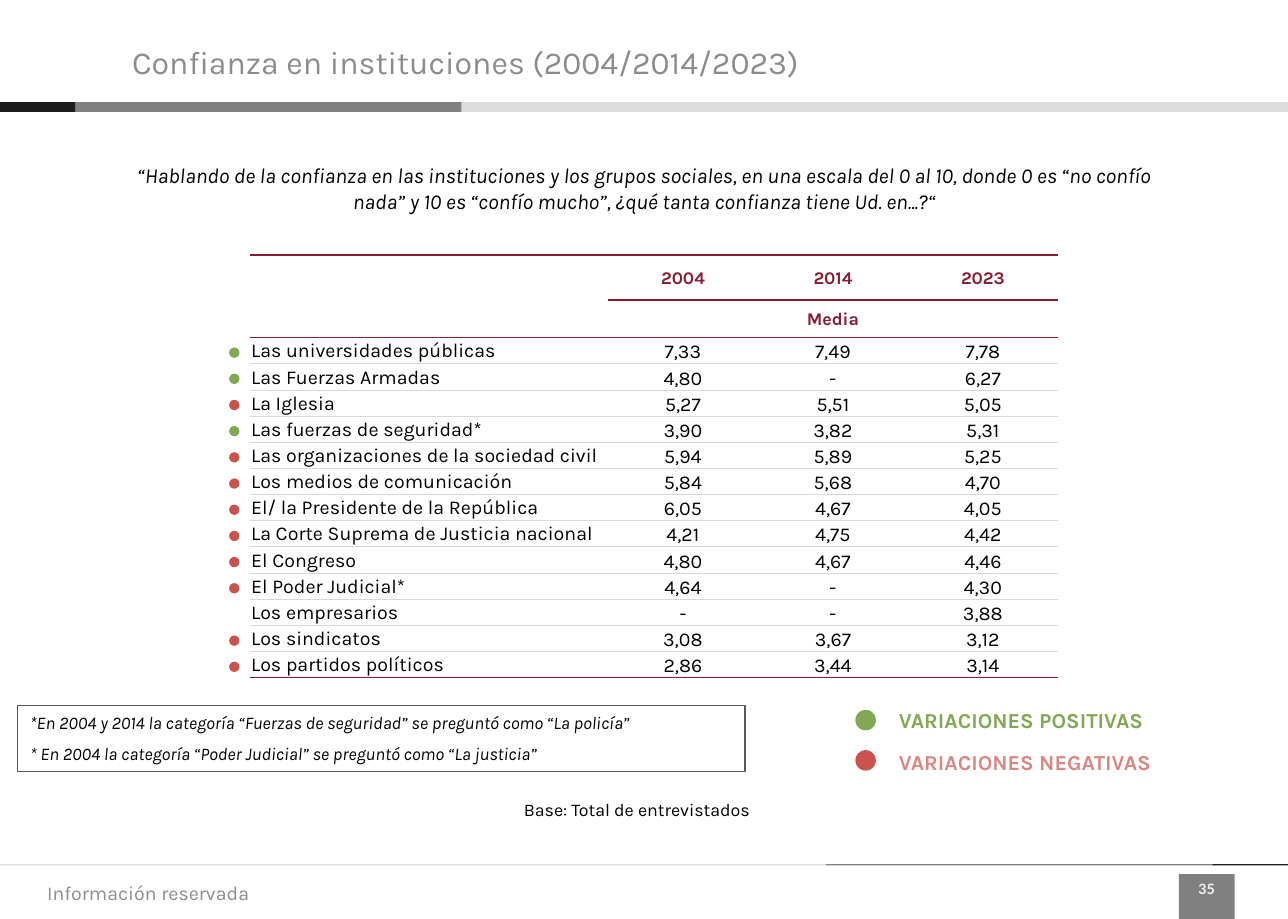
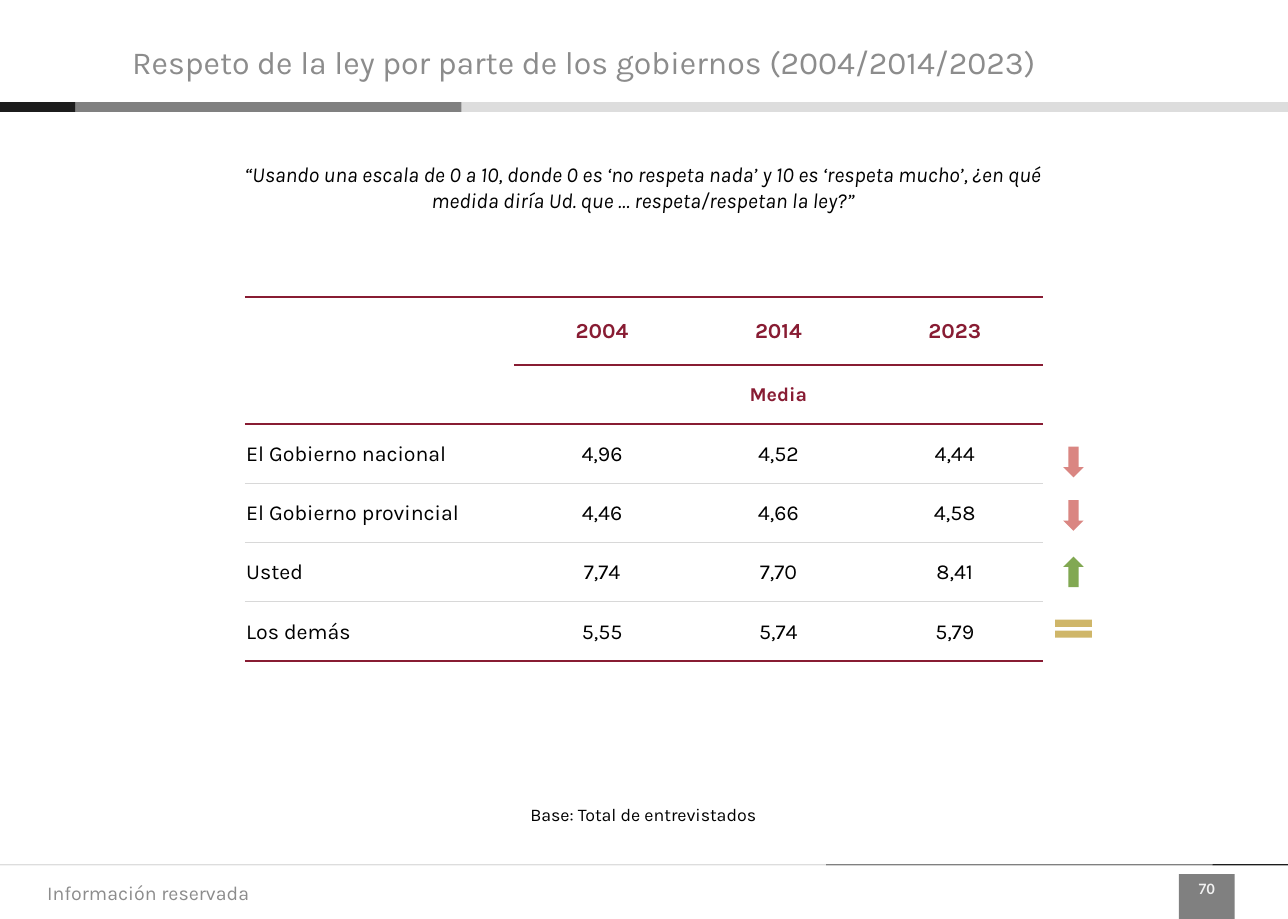
from lxml.etree import SubElement
from pptx import Presentation
from pptx.dml.color import RGBColor
from pptx.enum.shapes import MSO_SHAPE
from pptx.enum.text import MSO_ANCHOR, PP_ALIGN
from pptx.oxml import parse_xml
from pptx.oxml.ns import nsdecls, qn
from pptx.util import Pt

BLACK = RGBColor(0x00, 0x00, 0x00)
INK = RGBColor(0x1C, 0x1C, 0x1C)
OUTLINE = RGBColor(0x59, 0x59, 0x59)
GRAY = RGBColor(0x80, 0x80, 0x80)
TITLE_GRAY = RGBColor(0x8C, 0x8C, 0x8C)
RULE_GRAY = RGBColor(0xD8, 0xD8, 0xD8)
PALE = RGBColor(0xDD, 0xDD, 0xDD)
OFF_WHITE = RGBColor(0xF2, 0xF2, 0xF2)
MAROON = RGBColor(0x88, 0x1C, 0x33)
GREEN = RGBColor(0x81, 0xA8, 0x52)
RED = RGBColor(0xCB, 0x53, 0x4D)
PINK = RGBColor(0xDA, 0x86, 0x82)
GOLD = RGBColor(0xCF, 0xB6, 0x69)

YEARS = ["2004", "2014", "2023"]
BANDS = [(0, 42.5, INK), (42.5, 216.7, GRAY), (259.2, 463.8, PALE)]
FOOTER_LINES = [(0, 463.8, PALE), (463.8, 216.7, GRAY), (680.5, 42.5, INK)]

INSTITUTIONS = [
    ("Las universidades públicas", "7,33", "7,49", "7,78", GREEN),
    ("Las Fuerzas Armadas", "4,80", "-", "6,27", GREEN),
    ("La Iglesia", "5,27", "5,51", "5,05", RED),
    ("Las fuerzas de seguridad*", "3,90", "3,82", "5,31", GREEN),
    ("Las organizaciones de la sociedad civil", "5,94", "5,89", "5,25", RED),
    ("Los medios de comunicación", "5,84", "5,68", "4,70", RED),
    ("El/ la Presidente de la República", "6,05", "4,67", "4,05", RED),
    ("La Corte Suprema de Justicia nacional", "4,21", "4,75", "4,42", RED),
    ("El Congreso", "4,80", "4,67", "4,46", RED),
    ("El Poder Judicial*", "4,64", "-", "4,30", RED),
    ("Los empresarios", "-", "-", "3,88", None),
    ("Los sindicatos", "3,08", "3,67", "3,12", RED),
    ("Los partidos políticos", "2,86", "3,44", "3,14", RED),
]
GOVERNMENTS = [
    ("El Gobierno nacional", "4,96", "4,52", "4,44"),
    ("El Gobierno provincial", "4,46", "4,66", "4,58"),
    ("Usted", "7,74", "7,70", "8,41"),
    ("Los demás", "5,55", "5,74", "5,79"),
]
SLIDES = [
    dict(
        number="35",
        title="Confianza en instituciones (2004/2014/2023)",
        question="“Hablando de la confianza en las instituciones y los grupos sociales, "
        "en una escala del 0 al 10, donde 0 es “no confío nada” y 10 es “confío mucho”, "
        "¿qué tanta confianza tiene Ud. en...?“",
        question_at=(67, 87.8, 589.7, 36),
        base_at=(282.2, 445, 150.5, 20),
        table_at=(140.3, 143.3),
        columns=[201, 84.2, 84.2, 84.2],
        heights=[25.2, 21.1] + [14.7] * len(INSTITUTIONS),
        sizes=(10, 10, 11),
        value_anchor=MSO_ANCHOR.BOTTOM,
        rows=[row[:4] for row in INSTITUTIONS],
    ),
    dict(
        number="70",
        title="Respeto de la ley por parte de los gobiernos (2004/2014/2023)",
        question="“Usando una escala de 0 a 10, donde 0 es ‘no respeta nada’ y 10 es "
        "‘respeta mucho’, ¿en qué medida diría Ud. que … respeta/respetan la ley?”",
        question_at=(113.8, 87.1, 494.6, 36),
        base_at=(285.8, 447.8, 150.5, 20),
        table_at=(137.5, 166.7),
        columns=[151, 99, 99, 99],
        heights=[38.2, 33.1] + [33.3] * len(GOVERNMENTS),
        sizes=(12, 11, 12),
        value_anchor=MSO_ANCHOR.MIDDLE,
        rows=GOVERNMENTS,
    ),
]


def add_figure(page, kind, at, color):
    shape = page.shapes.add_shape(kind, *[Pt(length) for length in at])
    shape.shadow.inherit = False
    shape.line.fill.background()
    if color is None:
        shape.fill.background()
    else:
        shape.fill.solid()
        shape.fill.fore_color.rgb = color
    return shape


def write(frame, lines, size, color, bold=False, italic=False,
          align=PP_ALIGN.LEFT, anchor=MSO_ANCHOR.TOP, name="Karla"):
    frame.word_wrap = True
    frame.vertical_anchor = anchor
    for index, line in enumerate(lines):
        para = frame.paragraphs[0] if index == 0 else frame.add_paragraph()
        para.text = line
        para.alignment = align
        if index:
            para.space_before = Pt(5.7)
        para.font.name = name
        para.font.size = Pt(size)
        para.font.bold = bold
        para.font.italic = italic
        para.font.color.rgb = color


deck = Presentation()
deck.slide_width, deck.slide_height = Pt(723), Pt(516)
pages = []

for content in SLIDES:
    page = deck.slides.add_slide(deck.slide_layouts[6])
    pages.append(page)
    for left, width, color in BANDS:
        add_figure(page, MSO_SHAPE.RECTANGLE, (left, 57.4, width, 5.4), color)
    for left, width, color in FOOTER_LINES:
        add_figure(page, MSO_SHAPE.RECTANGLE, (left, 485.2, width, 0.7), color)
    badge = add_figure(page, MSO_SHAPE.RECTANGLE, (661.8, 490.8, 31.2, 25.2), GRAY)
    write(badge.text_frame, [content["number"]], 8, OFF_WHITE, bold=True,
          align=PP_ALIGN.CENTER, name="Lato")

    for line, at, style in [
        ("Información reservada", (19.4, 487.7, 168.5, 27.4),
         dict(size=11, color=TITLE_GRAY, anchor=MSO_ANCHOR.MIDDLE)),
        (content["title"], (67, 14.6, 567.4, 39.6),
         dict(size=18, color=TITLE_GRAY, anchor=MSO_ANCHOR.MIDDLE)),
        (content["question"], content["question_at"],
         dict(size=12, color=BLACK, italic=True, align=PP_ALIGN.CENTER)),
        ("Base: Total de entrevistados", content["base_at"],
         dict(size=10, color=BLACK, align=PP_ALIGN.CENTER)),
    ]:
        box = page.shapes.add_textbox(*[Pt(length) for length in at])
        write(box.text_frame, [line], **style)

    columns, heights = content["columns"], content["heights"]
    table_frame = page.shapes.add_table(
        len(heights), len(columns), *[Pt(length) for length in content["table_at"]],
        Pt(sum(columns)), Pt(sum(heights)))
    table = table_frame.table
    table.first_row = table.horz_banding = False
    for column, width in zip(table.columns, columns):
        column.width = Pt(width)
    for row, height in zip(table.rows, heights):
        row.height = Pt(height)

    grid = [["", *YEARS], ["", "Media", "", ""], *content["rows"]]
    last = len(grid) - 1
    for r, values in enumerate(grid):
        size = content["sizes"][min(r, 2)]
        for c, value in enumerate(values):
            cell = table.cell(r, c)
            cell.margin_left = cell.margin_right = cell.margin_top = Pt(0.7)
            cell.margin_bottom = Pt(0)
            cell.fill.background()
            write(cell.text_frame, [value], size, MAROON if r < 2 else BLACK, bold=r < 2,
                  align=PP_ALIGN.CENTER if c else PP_ALIGN.LEFT)
            cell.vertical_anchor = content["value_anchor"] if r > 1 and c else MSO_ANCHOR.MIDDLE
            properties = cell._tc.get_or_add_tcPr()
            edges = [("lnL", None), ("lnR", None),
                     ("lnT", MAROON if r < 3 else RULE_GRAY),
                     ("lnB", MAROON if r < 2 or r == last else RULE_GRAY)]
            for position, (edge, color) in enumerate(edges):
                width = Pt(1) if color == MAROON else Pt(0.5)
                line = parse_xml(f'<a:{edge} {nsdecls("a")} w="{width}"/>')
                if color is None:
                    SubElement(line, qn("a:noFill"))
                else:
                    solid = SubElement(line, qn("a:solidFill"))
                    SubElement(solid, qn("a:srgbClr"), val=str(color))
                properties.insert(position, line)
    table.cell(0, 0).merge(table.cell(1, 0))
    table.cell(1, 1).merge(table.cell(1, 3))

trust_page, law_page = pages

for index, (*_, color) in enumerate(INSTITUTIONS):
    if color is not None:
        add_figure(trust_page, MSO_SHAPE.OVAL, (128.6, 195.1 + 14.7 * index, 5.8, 5.8), color)

notes = add_figure(trust_page, MSO_SHAPE.RECTANGLE, (9.8, 396, 408.4, 37.4), None)
notes.line.color.rgb = OUTLINE
notes.line.width = Pt(0.75)
write(notes.text_frame, [
    "*En 2004 y 2014 la categoría “Fuerzas de seguridad” se preguntó como “La policía”",
    "* En 2004 la categoría “Poder Judicial” se preguntó como “La justicia”",
], 10, BLACK, italic=True, align=PP_ALIGN.JUSTIFY)

for label, dot_top, label_top, dot_color, label_color in [
    ("VARIACIONES POSITIVAS", 398.6, 393.3, GREEN, GREEN),
    ("VARIACIONES NEGATIVAS", 421.2, 416.9, RED, PINK),
]:
    add_figure(trust_page, MSO_SHAPE.OVAL, (480.2, dot_top, 11.5, 11.5), dot_color)
    box = trust_page.shapes.add_textbox(Pt(497.5), Pt(label_top), Pt(180), Pt(21.6))
    write(box.text_frame, [label], 12, label_color, bold=True)

for kind, top, width, color in [
    (MSO_SHAPE.DOWN_ARROW, 250.8, 11.5, PINK),
    (MSO_SHAPE.DOWN_ARROW, 280.8, 11.5, PINK),
    (MSO_SHAPE.UP_ARROW, 312.5, 11.5, GREEN),
    (MSO_SHAPE.MATH_EQUAL, 344.4, 28, GOLD),
]:
    add_figure(law_page, kind, (602.6 - width / 2, top, width, 17.2), color)

deck.save("out.pptx")
